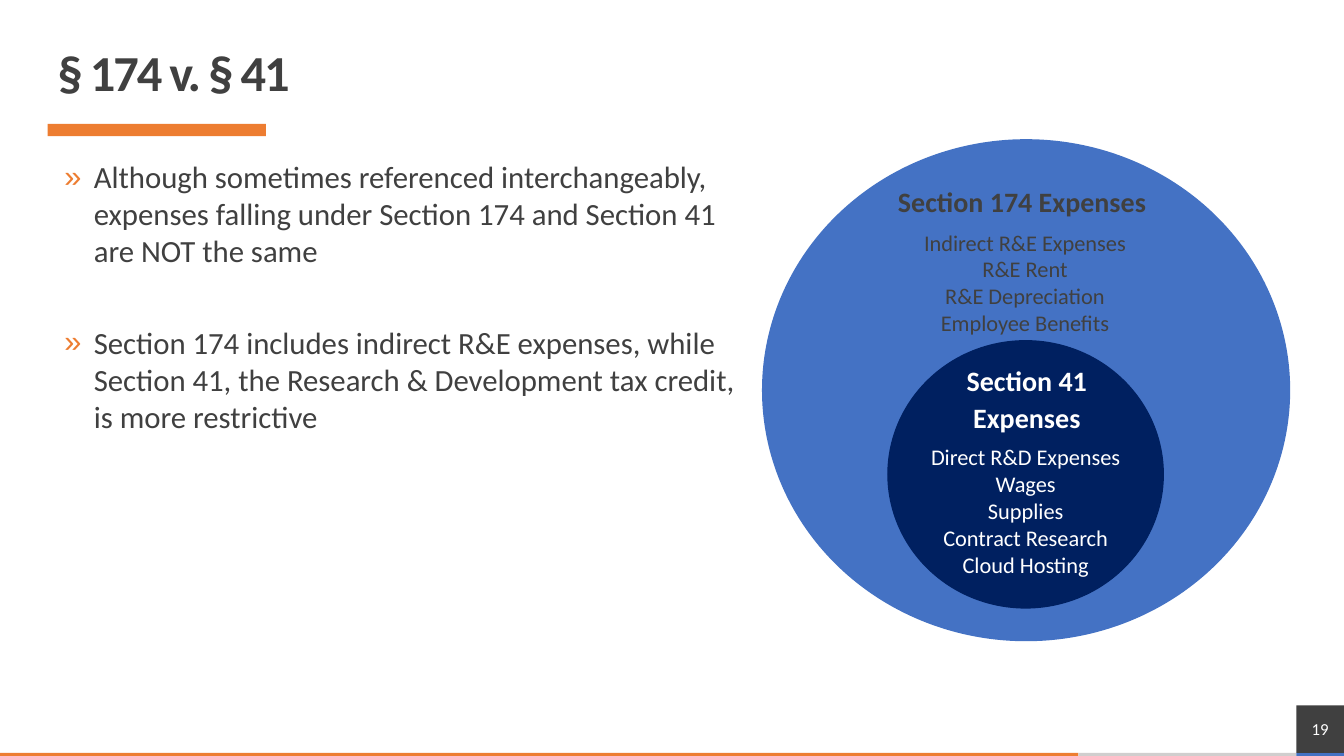
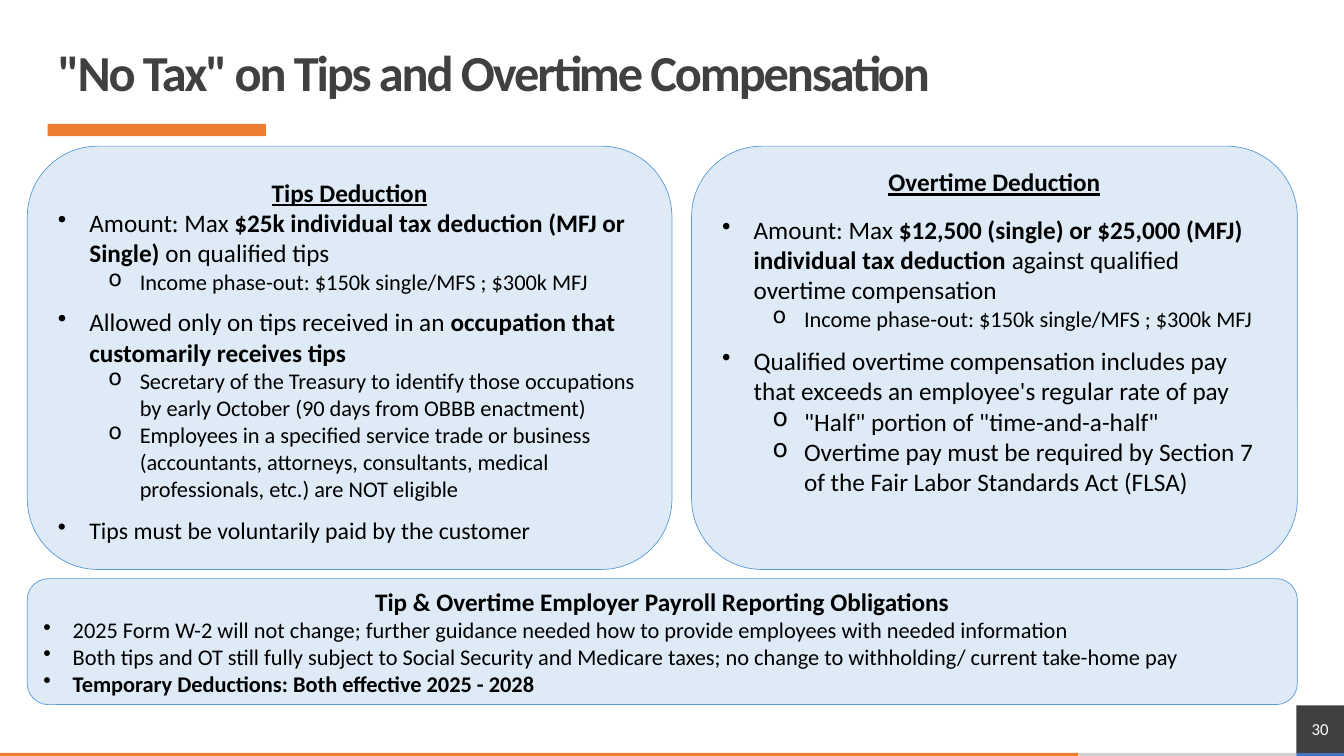
"""Build two tax slides: research expenses, and tips and overtime deductions."""
from dataclasses import dataclass
from typing import Optional

import lxml.etree
import pptx
import pptx.dml.color
import pptx.enum.shapes
import pptx.enum.text
import pptx.oxml.ns
import pptx.util

Pt = pptx.util.Pt
RGBColor = pptx.dml.color.RGBColor
Shape = pptx.enum.shapes.MSO_SHAPE
Anchor = pptx.enum.text.MSO_ANCHOR
Align = pptx.enum.text.PP_ALIGN

FONT = "Calibri"
ORANGE = RGBColor(0xED, 0x7D, 0x31)
BLUE = RGBColor(0x44, 0x72, 0xC4)
NAVY = RGBColor(0x00, 0x20, 0x60)
GRAY = RGBColor(0xD0, 0xCE, 0xCE)
CHARCOAL = RGBColor(0x40, 0x40, 0x40)
PALE_BLUE = RGBColor(0xDE, 0xEB, 0xF7)
SKY = RGBColor(0x5B, 0x9B, 0xD5)
BLACK = RGBColor(0, 0, 0)
WHITE = RGBColor(0xFF, 0xFF, 0xFF)

PAGE_WIDTH, PAGE_HEIGHT = 960, 540
FOOTER_TOP = 537.8
NUMBER_SIZE = 34
TITLE_AND_BODY, TITLE_ONLY = 1, 5


@dataclass(frozen=True)
class Box:
    left: float
    top: float
    width: float
    height: float


@dataclass(frozen=True)
class Bullet:
    symbol: str
    indent: float
    hanging: float
    level: int = 0
    color: Optional[RGBColor] = None


@dataclass(frozen=True)
class Span:
    text: str
    bold: bool = False


@dataclass(frozen=True)
class Para:
    spans: tuple[Span, ...]
    size: float = 18
    color: RGBColor = BLACK
    bullet: Optional[Bullet] = None
    gap: float = 0
    underline: bool = False
    centered: bool = False
    line_height: Optional[float] = None


@dataclass(frozen=True)
class Card:
    box: Box
    anchor: Anchor
    paras: list[Para]
    inset_top: float = 3.6


QUOTE = Bullet("»", 21, 21, color=ORANGE)
DOT = Bullet("•", 22.5, 22.5)
CIRCLE = Bullet("o", 58.5, 22.5, level=1)
NOTE_DOT = Bullet("•", 21, 21)


def plain(text: str, size: float = 18, bullet: Optional[Bullet] = None, gap: float = 0) -> Para:
    return Para((Span(text),), size, bullet=bullet, gap=gap)


def heading(text: str, underline: bool = True) -> Para:
    return Para((Span(text, True),), underline=underline, centered=True)


def centered_list(lines: list[str], color: RGBColor) -> list[Para]:
    return [Para((Span(line),), 16, color, centered=True) for line in lines]


def place(shape, box: Box) -> None:
    shape.left, shape.top = Pt(box.left), Pt(box.top)
    shape.width, shape.height = Pt(box.width), Pt(box.height)


def add_bullet(paragraph, bullet: Bullet) -> None:
    qn = pptx.oxml.ns.qn
    properties = paragraph._p.get_or_add_pPr()
    properties.set("marL", str(Pt(bullet.indent)))
    properties.set("indent", str(-Pt(bullet.hanging)))
    if bullet.color is not None:
        holder = lxml.etree.SubElement(properties, qn("a:buClr"))
        lxml.etree.SubElement(holder, qn("a:srgbClr")).set("val", str(bullet.color))
    lxml.etree.SubElement(properties, qn("a:buChar")).set("char", bullet.symbol)


def write(frame, paras: list[Para]) -> None:
    frame.word_wrap = True
    frame.auto_size = pptx.enum.text.MSO_AUTO_SIZE.NONE
    for index, para in enumerate(paras):
        paragraph = frame.add_paragraph() if index else frame.paragraphs[0]
        if para.bullet:
            paragraph.level = para.bullet.level
            add_bullet(paragraph, para.bullet)
        paragraph.alignment = Align.CENTER if para.centered else Align.LEFT
        paragraph.space_before = Pt(para.gap)
        if para.line_height:
            paragraph.line_spacing = Pt(para.line_height)
        font = paragraph.font
        font.name, font.size = FONT, Pt(para.size)
        font.color.rgb = para.color
        if para.underline:
            font.underline = True
        weights = {span.bold for span in para.spans}
        if len(weights) == 1:
            font.bold = weights.pop()
        for span in para.spans:
            run = paragraph.add_run()
            run.text = span.text
            if len({part.bold for part in para.spans}) > 1:
                run.font.bold = span.bold


def add_figure(page, kind: Shape, box: Box, fill: RGBColor,
               line: Optional[RGBColor] = None, line_width: float = 1):
    figure = page.shapes.add_shape(kind, 0, 0, 0, 0)
    place(figure, box)
    figure.shadow.inherit = False
    figure.fill.solid()
    figure.fill.fore_color.rgb = fill
    if line is None:
        figure.line.fill.background()
    else:
        figure.line.color.rgb = line
        figure.line.width = Pt(line_width)
    return figure


def add_text(page, box: Box, paras: list[Para]) -> None:
    label = page.shapes.add_textbox(0, 0, 0, 0)
    place(label, box)
    write(label.text_frame, paras)


def add_card(page, card: Card) -> None:
    figure = add_figure(page, Shape.ROUNDED_RECTANGLE, card.box, PALE_BLUE, SKY, 0.5)
    frame = figure.text_frame
    frame.margin_top = Pt(card.inset_top)
    frame.vertical_anchor = card.anchor
    write(frame, card.paras)


def add_page(deck, layout: int, title: str, number: str):
    page = deck.slides.add_slide(deck.slide_layouts[layout])
    number_left = PAGE_WIDTH - NUMBER_SIZE
    stops = [0, 770.4, number_left, PAGE_WIDTH]
    for left, right, color in zip(stops, stops[1:], (ORANGE, GRAY, BLUE)):
        strip = Box(left, FOOTER_TOP, right - left, PAGE_HEIGHT - FOOTER_TOP)
        add_figure(page, Shape.RECTANGLE, strip, color)
    number_box = Box(number_left, FOOTER_TOP - NUMBER_SIZE, NUMBER_SIZE, NUMBER_SIZE)
    frame = add_figure(page, Shape.RECTANGLE, number_box, CHARCOAL).text_frame
    frame.margin_left = frame.margin_right = frame.margin_top = frame.margin_bottom = 0
    frame.vertical_anchor = Anchor.MIDDLE
    write(frame, [Para((Span(number),), 12, WHITE, centered=True)])
    add_figure(page, Shape.RECTANGLE, Box(34, 88.5, 156, 8.7), ORANGE)

    heading_shape = page.shapes.title
    place(heading_shape, Box(34, 28.8, 860, 50.4))
    heading_shape.text_frame.vertical_anchor = Anchor.MIDDLE
    write(heading_shape.text_frame, [Para((Span(title, True),), 36, CHARCOAL)])
    paragraph = heading_shape.text_frame.paragraphs[0]
    paragraph.line_spacing = 0.9
    paragraph.runs[0]._r.get_or_add_rPr().set("spc", "-150")
    return page


def build_research(deck) -> None:
    page = add_page(deck, TITLE_AND_BODY, "§ 174 v. § 41", "19")
    body = page.placeholders[1]
    place(body, Box(46, 113, 482.4, 380))
    frame = body.text_frame
    frame.margin_left = frame.margin_right = frame.margin_top = frame.margin_bottom = 0
    points = [
        "Although sometimes referenced interchangeably, expenses falling under "
        "Section 174 and Section 41 are NOT the same",
        "Section 174 includes indirect R&E expenses, while Section 41, "
        "the Research & Development tax credit, is more restrictive",
    ]
    write(frame, [Para((Span(point),), 22, CHARCOAL, QUOTE, gap=39 if index else 0)
                  for index, point in enumerate(points)])

    add_figure(page, Shape.OVAL, Box(544.3, 99.4, 377.3, 358.6), BLUE)
    add_figure(page, Shape.OVAL, Box(634.3, 243.4, 196.6, 190.8), NAVY, NAVY)
    add_text(page, Box(634.3, 128.2, 216, 31.7),
             [Para((Span("Section 174 Expenses", True),), 20, CHARCOAL)])
    add_text(page, Box(624.2, 159.8, 216, 85), centered_list(
        ["Indirect R&E Expenses", "R&E Rent", "R&E Depreciation", "Employee Benefits"], CHARCOAL))
    add_text(page, Box(651, 254, 164.9, 60), [
        Para((Span("Section 41 Expenses", True),), 20, WHITE, centered=True, line_height=26.4)])
    add_text(page, Box(650.2, 313.2, 164.9, 104.4), centered_list(
        ["Direct R&D Expenses", "Wages", "Supplies", "Contract Research", "Cloud Hosting"], WHITE))


def build_deductions(deck) -> None:
    page = add_page(deck, TITLE_ONLY, '"No Tax" on Tips and Overtime Compensation', "30")
    phase_out = plain("Income phase-out: $150k single/MFS ; $300k MFJ", 16, CIRCLE)
    tips = [
        heading("Tips Deduction"),
        Para((Span("Amount: Max "),
              Span("$25k individual tax deduction (MFJ or Single)", True),
              Span(" on qualified tips")), bullet=DOT),
        phase_out,
        Para((Span("Allowed only on tips received in an "),
              Span("occupation that customarily receives tips", True)), bullet=DOT, gap=8.5),
        plain("Secretary of the Treasury to identify those occupations by early October "
              "(90 days from OBBB enactment)", 16, CIRCLE),
        plain("Employees in a specified service trade or business (accountants, attorneys, "
              "consultants, medical professionals, etc.) are NOT eligible", 16, CIRCLE),
        plain("Tips must be voluntarily paid by the customer", 17, DOT, 9.8),
    ]
    overtime = [
        heading("Overtime Deduction"),
        Para((Span("Amount: Max "),
              Span("$12,500 (single) or $25,000 (MFJ) individual tax deduction", True),
              Span(" against qualified overtime compensation")), bullet=DOT, gap=12.2),
        phase_out,
        plain("Qualified overtime compensation includes pay that exceeds an employee's "
              "regular rate of pay", 18, DOT, 9.8),
        plain('"Half" portion of "time-and-a-half"', 18, CIRCLE),
        plain("Overtime pay must be required by Section 7 of the Fair Labor Standards Act (FLSA)",
              18, CIRCLE),
    ]
    reporting = [
        heading("Tip & Overtime Employer Payroll Reporting Obligations", underline=False),
        plain("2025 Form W-2 will not change; further guidance needed how to provide "
              "employees with needed information", 16, NOTE_DOT),
        plain("Both tips and OT still fully subject to Social Security and Medicare taxes; "
              "no change to withholding/ current take-home pay", 16, NOTE_DOT),
        Para((Span("Temporary Deductions: Both effective 2025 - 2028", True),), 16,
             bullet=NOTE_DOT),
    ]
    for card in (
        Card(Box(19.5, 104.4, 460.5, 302.4), Anchor.BOTTOM, tips),
        Card(Box(494, 104.4, 432.7, 302.4), Anchor.TOP, overtime, inset_top=0),
        Card(Box(19.5, 413.3, 907.2, 90), Anchor.MIDDLE, reporting),
    ):
        add_card(page, card)


def main() -> None:
    deck = pptx.Presentation()
    deck.slide_width, deck.slide_height = Pt(PAGE_WIDTH), Pt(PAGE_HEIGHT)
    build_research(deck)
    build_deductions(deck)
    deck.save("out.pptx")


if __name__ == "__main__":
    main()
